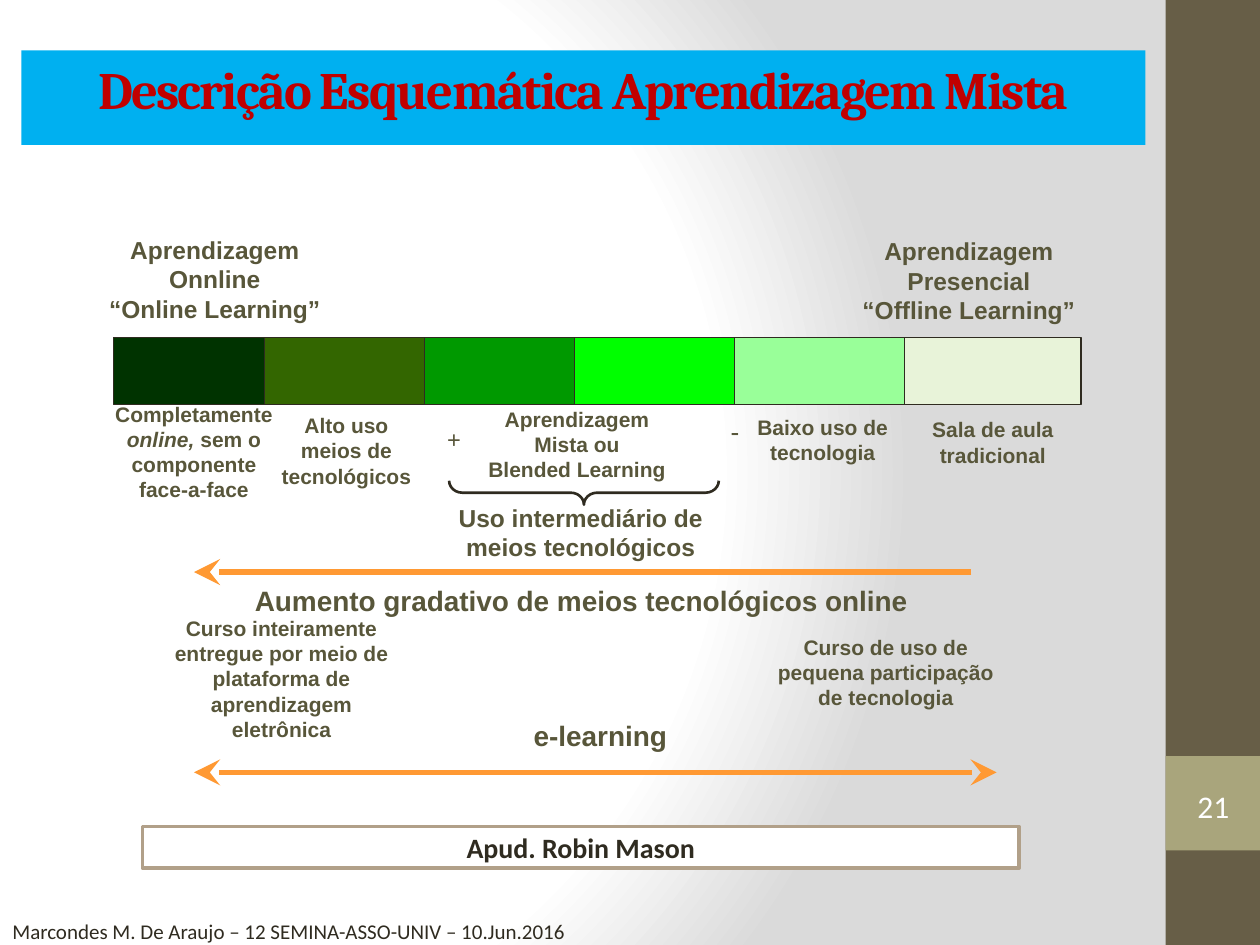
from itertools import pairwise

from lxml.etree import SubElement
from pptx import Presentation
from pptx.dml.color import RGBColor
from pptx.enum.shapes import MSO_CONNECTOR, MSO_SHAPE
from pptx.enum.text import MSO_ANCHOR as Anchor, MSO_AUTO_SIZE, PP_ALIGN as Align
from pptx.oxml import parse_xml
from pptx.oxml.ns import nsdecls, qn
from pptx.util import Inches, Pt

COLUMNS, ROWS = 100, 75  # grid cells are a tenth of an inch
COLORS = {
    "white": "FFFFFF", "shade": "DADADA", "sidebar": "675E47", "badge": "A9A57C",
    "text": "58563A", "ink": "2F2B20", "arrow": "FF9933", "banner": "00B0F0",
    "title": "C00000", "frame": "B1A089",
}
SCALE_COLORS = ["003300", "336600", "009900", "00FF00", "99FF99", "E8F3D9"]
SCALE_EDGES = [9, 21, 33.7, 45.6, 58.3, 71.8, 85.8]

# box on the grid, font size, wrap, lines
LABELS = [
    ((7.6, 18.1, 18.9, 8.1), 14, False, ["Aprendizagem", "Onnline", "“Online Learning”"]),
    ((67.4, 18.2, 19, 8.1), 14, False, ["Aprendizagem", "Presencial", "“Offline Learning”"]),
    ((8.1, 31.3, 14.6, 9.1), 12, False,
     ["Completamente", "online, sem o", "componente", "face-a-face"]),
    ((21.3, 32.2, 12.4, 7.1), 12, False, ["Alto uso", "meios de", "tecnológicos"]),
    ((37, 31.7, 17.6, 7.1), 12, True, ["Aprendizagem Mista ou", "Blended Learning"]),
    ((58.8, 32.4, 13, 5), 12, False, ["Baixo uso de", "tecnologia"]),
    ((72.7, 32.6, 12.2, 5), 12, False, ["Sala de aula", "tradicional"]),
    ((35.1, 39.4, 22, 5.7), 14, False, ["Uso intermediário de", "meios tecnológicos"]),
    ((16.6, 45.8, 59.1, 3.7), 16, True, ["Aumento gradativo de meios tecnológicos online"]),
    ((12, 48.3, 20.7, 11.1), 12, True,
     ["Curso inteiramente", "entregue por meio de", "plataforma de", "aprendizagem",
      "eletrônica"]),
    ((60.4, 49.8, 19.8, 7.1), 12, False,
     ["Curso de uso de", "pequena participação", "de tecnologia"]),
    ((18.1, 56.5, 59.1, 3.7), 16, True, ["e-learning"]),
]
ITALIC = "online,"


def cells(*values):
    """Turn grid cells into lengths."""
    return [Inches(value / 10) for value in values]


def rgb(color):
    return RGBColor.from_string(COLORS.get(color, color))


def set_font(paragraph, size, color, name="Arial", bold=True, align=Align.CENTER):
    paragraph.alignment = align
    font = paragraph.font
    font.name, font.size, font.bold = name, Pt(size), bold
    font.color.rgb = rgb(color)


def set_background(slide):
    stops = "".join(
        f'<a:gs pos="{share * 1000}"><a:srgbClr val="{COLORS[color]}"/></a:gs>'
        for share, color in [(0, "white"), (75, "white"), (100, "shade")])
    slide.background.fill.solid()
    properties = slide._element.cSld.find(qn("p:bg")).find(qn("p:bgPr"))
    properties.replace(properties[0], parse_xml(
        f'<a:gradFill {nsdecls("a")} rotWithShape="1"><a:gsLst>{stops}</a:gsLst>'
        '<a:path path="circle"><a:fillToRect l="20000" t="50000" r="100000" b="50000"/>'
        '</a:path></a:gradFill>'))


def add_box(slide, box, fill=None, line=None, width=0.75, kind=MSO_SHAPE.RECTANGLE):
    shape = slide.shapes.add_shape(kind, *cells(*box))
    shape.shadow.inherit = False
    if fill:
        shape.fill.solid()
        shape.fill.fore_color.rgb = rgb(fill)
    else:
        shape.fill.background()
    if line:
        shape.line.color.rgb = rgb(line)
        shape.line.width = Pt(width)
    else:
        shape.line.fill.background()
    return shape


def write_in_shape(shape, text, size, color, bold):
    frame = shape.text_frame
    frame.vertical_anchor = Anchor.MIDDLE
    frame.text = text
    set_font(frame.paragraphs[0], size, color, "Calibri", bold)


def add_text(slide, box, size, lines, wrap=False, anchor=Anchor.TOP, **font):
    frame = slide.shapes.add_textbox(*cells(*box)).text_frame
    frame.word_wrap = wrap
    frame.vertical_anchor = anchor
    for index, line in enumerate(lines):
        paragraph = frame.paragraphs[0] if index == 0 else frame.add_paragraph()
        if line.startswith(ITALIC):
            run = paragraph.add_run()
            run.text, run.font.italic = ITALIC, True
            line = line.removeprefix(ITALIC)
        paragraph.add_run().text = line
        set_font(paragraph, size, **{"color": "text", **font})


def add_arrow(slide, left, right, row, ends):
    arrow = slide.shapes.add_connector(
        MSO_CONNECTOR.STRAIGHT, *cells(right, row, left, row))
    arrow.line.color.rgb = rgb("arrow")
    arrow.line.width = Pt(3)
    for end in ends:
        SubElement(arrow.line._get_or_add_ln(), qn(f"a:{end}"),
                   type="stealth", w="lg", len="lg")
    SubElement(arrow._element.spPr, qn("a:effectLst"))


def format_title(title):
    title.left, title.top, title.width, title.height = cells(1.7, 4, 89.2, 7.5)
    title.fill.solid()
    title.fill.fore_color.rgb = rgb("banner")
    frame = title.text_frame
    frame.auto_size = MSO_AUTO_SIZE.NONE
    frame.vertical_anchor = Anchor.TOP
    frame.text = "Descrição Esquemática Aprendizagem Mista"
    paragraph = frame.paragraphs[0]
    set_font(paragraph, 30, "title", "Cambria")
    paragraph.runs[0].font._element.set("spc", "-100")


def add_scale(slide):
    for color, (left, right) in zip(SCALE_COLORS, pairwise(SCALE_EDGES)):
        add_box(slide, (left, 26.8, right - left, 5.3), color, "ink")


def add_sidebar(slide):
    add_box(slide, (92.5, 0, 7.5, ROWS), "sidebar")
    add_box(slide, (92.5, 60, 7.5, 7.5), "badge")
    number = add_box(slide, (93.3, 61.8, 6, 4.3), kind=MSO_SHAPE.DOUBLE_BRACKET)
    frame = number.text_frame
    frame.margin_left = frame.margin_right = frame.margin_top = frame.margin_bottom = 0
    write_in_shape(number, "21", 18, "white", False)


def main():
    presentation = Presentation()
    presentation.slide_width, presentation.slide_height = cells(COLUMNS, ROWS)
    slide = presentation.slides.add_slide(presentation.slide_layouts[5])
    set_background(slide)
    format_title(slide.shapes.title)
    add_sidebar(slide)
    add_scale(slide)

    for box, size, wrap, lines in LABELS:
        add_text(slide, box, size, lines, wrap, Anchor.MIDDLE)
    add_text(slide, (34.5, 33.2, 2.8, 3.3), 13.5, ["+"], bold=False, align=Align.LEFT)
    add_text(slide, (57, 32.5, 2.7, 3.5), 15, ["-"], bold=False, align=Align.LEFT)

    brace = add_box(slide, (45.4, 28.4, 1.9, 21.4), line="ink", width=1.5,
                    kind=MSO_SHAPE.LEFT_BRACE)
    brace.rotation = 270
    brace.adjustments[0], brace.adjustments[1] = 0.55, 0.5

    add_arrow(slide, 15.4, 77.1, 45.4, ["tailEnd"])
    add_arrow(slide, 15.4, 79.1, 61.3, ["headEnd", "tailEnd"])

    credit = add_box(slide, (11.3, 65.6, 69.6, 3.3), "white", "frame", 2)
    write_in_shape(credit, "Apud. Robin Mason", 16, "ink", True)
    add_text(slide, (0, 72.4, 47, 3), 12,
             ["Marcondes M. De Araujo – 12 SEMINA-ASSO-UNIV – 10.Jun.2016"],
             color="ink", name="Calibri", bold=False, align=Align.LEFT)
    presentation.save("out.pptx")


if __name__ == "__main__":
    main()
